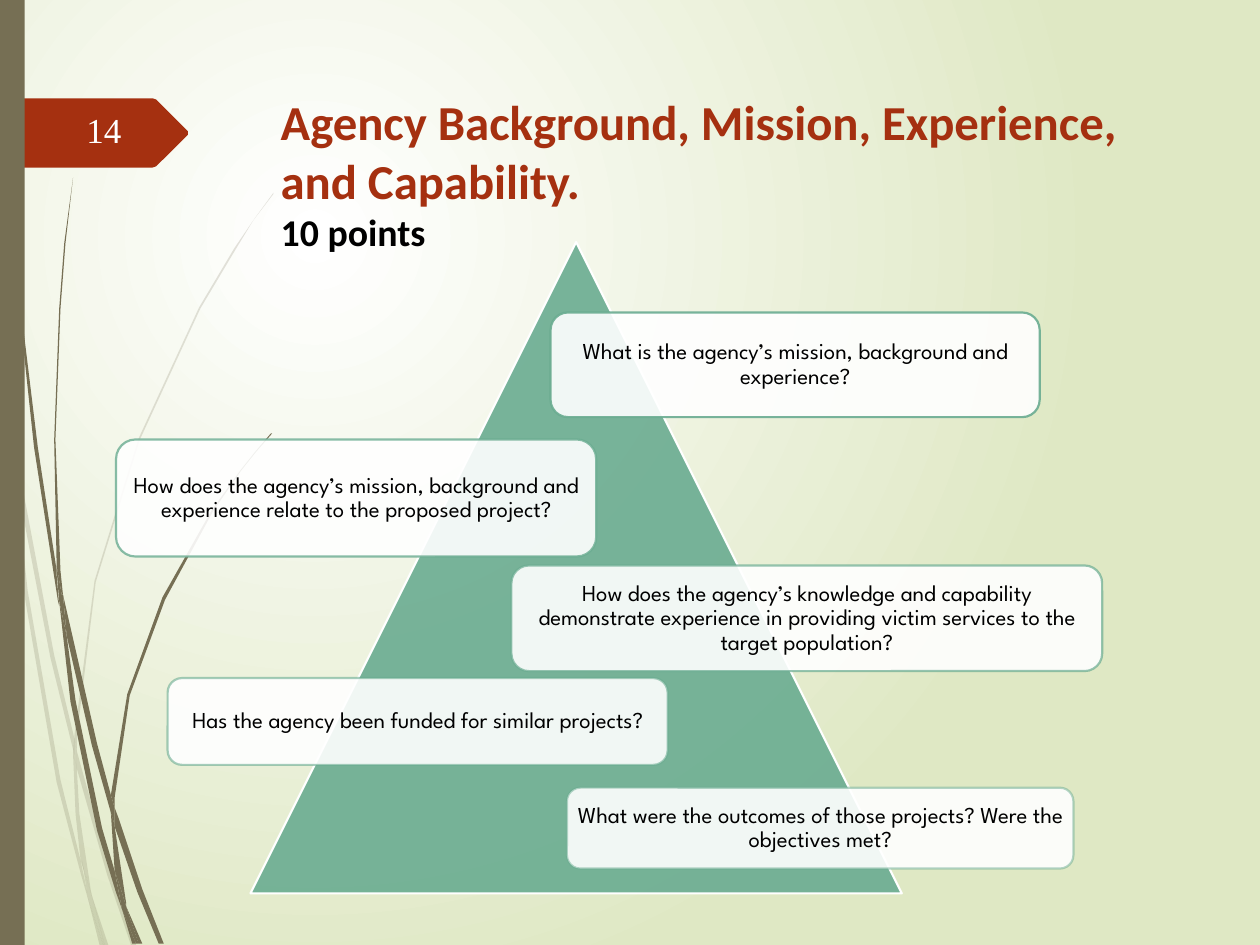
from lxml.etree import SubElement
from pptx import Presentation
from pptx.dml.color import RGBColor
from pptx.enum.shapes import MSO_SHAPE as Shape
from pptx.enum.text import MSO_ANCHOR as Anchor, PP_ALIGN as Align
from pptx.oxml.ns import qn
from pptx.util import Cm, Pt

COLORS = {"white": "FFFFFF", "black": "000000", "sage": "DFE8C4",
          "olive": "766F54", "rust": "A53010", "green": "6AAC91"}
RGB = {name: RGBColor.from_string(value) for name, value in COLORS.items()}
UNIT = Cm(2.54) / 100  # outlines are drawn in hundredths of an inch

# Outline points of each piece of the wisps
PALE_WISPS = [
    [(8, 350), (6, 322), (0, 282), (0, 299), (7, 344)],
    [(40, 522), (59, 599), (59, 586), (43, 520), (10, 345), (12, 376)],
    [(64, 607), (61, 596), (61, 610), (85, 694), (104, 750), (108, 750),
     (88, 692)],
    [(83, 750), (86, 750), (73, 711)],
    [(64, 683), (48, 619), (22, 469), (12, 376), (8, 350), (19, 470),
     (45, 621), (64, 693), (70, 714), (69, 707)],
    [(58, 599), (60, 646), (64, 683), (67, 692), (73, 711), (72, 706),
     (63, 646), (61, 610), (61, 608)],
    [(61, 584), (76, 462), (111, 349), (159, 245), (187, 198), (201, 175),
     (217, 154), (217, 153), (201, 175), (186, 197), (158, 244), (110, 348),
     (75, 461), (59, 584), (59, 586), (61, 596)],
    [(70, 714), (79, 750), (82, 750)],
    [(61, 608), (61, 610), (61, 596), (59, 586), (58, 599)],
    [(67, 692), (65, 683), (69, 707), (70, 714), (82, 750), (83, 750),
     (73, 711)],
]
DARK_WISPS = [
    [(5, 110), (14, 233), (27, 355), (46, 477), (47, 481), (45, 457),
     (45, 453), (30, 355), (15, 232), (6, 109), (4, 48), (3, 0), (2, 0),
     (3, 48)],
    [(73, 592), (88, 645), (88, 633), (88, 631), (77, 590), (50, 472),
     (53, 505)],
    [(94, 649), (91, 641), (91, 656), (109, 708), (126, 749), (130, 749),
     (113, 706)],
    [(91, 691), (81, 657), (60, 556), (53, 505), (47, 477), (56, 557),
     (77, 659), (92, 708), (97, 722), (96, 717)],
    [(50, 472), (48, 453), (44, 349), (48, 245), (52, 193), (58, 141),
     (58, 141), (51, 193), (47, 245), (43, 349), (45, 449), (49, 472)],
    [(110, 749), (113, 749), (100, 719)],
    [(47, 477), (53, 505), (50, 472), (49, 472), (45, 449), (45, 453)],
    [(91, 633), (103, 552), (131, 476), (169, 406), (191, 374), (203, 359),
     (216, 344), (215, 344), (203, 358), (191, 373), (168, 405), (129, 474),
     (101, 551), (88, 631), (91, 641)],
    [(97, 722), (105, 749), (108, 749)],
    [(88, 645), (91, 691), (96, 706), (100, 719), (100, 716), (91, 656),
     (90, 651)],
    [(88, 645), (90, 651), (91, 656), (91, 641), (88, 631), (88, 633)],
    [(96, 706), (91, 691), (96, 717), (97, 722), (108, 749), (110, 749),
     (100, 719)],
]
NUMBER_TAG = [(149, 107), (124, 132), (121, 133), (0, 133), (0, 78),
              (121, 78), (124, 79), (149, 104)]

QUESTIONS = [  # text, left, top, width, height, outline opacity
    ("What is the agency’s mission, background and experience?",
     11.1, 6.3, 9.86, 2.11, 90),
    ("How does the agency’s mission, background and experience relate "
     "to the proposed project?", 2.34, 8.86, 9.68, 2.36, 80),
    ("How does the agency’s knowledge and capability demonstrate experience "
     "in providing victim services to the target population?",
     10.31, 11.4, 11.91, 2.13, 70),
    ("Has the agency been funded for similar projects?",
     3.38, 13.67, 10.08, 1.75, 60),
    ("What were the outcomes of those projects? Were the objectives met?",
     11.43, 15.88, 10.21, 1.63, 50),
]
QUESTION_FRAME = {"word_wrap": True, "vertical_anchor": Anchor.MIDDLE,
                  "margin_left": Cm(0.12), "margin_right": Cm(0.12),
                  "margin_top": Cm(0.12), "margin_bottom": Cm(0.12)}


def paint(shape, fill, opacity=100, line=None, line_opacity=100):
    """Fill and outline a shape, with opacities in percent."""
    shape.shadow.inherit = False
    shape.fill.solid()
    shape.fill.fore_color.rgb = RGB[fill]
    if line:
        shape.line.color.rgb = RGB[line]
        shape.line.width = Pt(1.25)
    else:
        shape.line.fill.background()
    for path, percent in (("a:solidFill", opacity), ("a:ln", line_opacity)):
        if percent < 100:
            part = shape.element.spPr.find(qn(path))
            color = next(part.iter(qn("a:srgbClr")))
            SubElement(color, qn("a:alpha"), val=str(percent * 1000))


def write(paragraph, text, color, **font):
    run = paragraph.add_run()
    run.text = text
    run.font.color.rgb = RGB[color]
    for name, value in font.items():
        setattr(run.font, name, value)


deck = Presentation()
deck.slide_width, deck.slide_height = Cm(25.4), Cm(19.05)
slide = deck.slides.add_slide(deck.slide_layouts[6])
shapes = slide.shapes

# Radial background
backdrop = slide.background.fill
backdrop.gradient()
for stop, color in zip(backdrop.gradient_stops, ("white", "sage")):
    stop.color.rgb = RGB[color]
gradient = next(slide.element.iter(qn("a:gradFill")))
gradient.remove(gradient.find(qn("a:lin")))
circle = SubElement(gradient, qn("a:path"), path="circle")
SubElement(circle, qn("a:fillToRect"), l="50000", t="50000",
           r="100000", b="100000")

# Wisps, side bar and number tag
for outlines, color, opacity in ((PALE_WISPS, "olive", 20),
                                 (DARK_WISPS, "olive", 100),
                                 ([NUMBER_TAG], "rust", 100)):
    for start, *rest in outlines:
        builder = shapes.build_freeform(*start, scale=UNIT)
        builder.add_line_segments(rest, close=True)
        paint(builder.convert_to_shape(), color, opacity)
side_bar = shapes.add_shape(Shape.RECTANGLE, 0, 0, Cm(0.5), Cm(19.05))
paint(side_bar, "olive")

# Title and slide number
title = shapes.add_textbox(Cm(5.41), Cm(1.73), Cm(18.31), Cm(3.56)).text_frame
title.word_wrap = True
heading = title.paragraphs[0]
write(heading, "Agency Background, Mission, Experience, and Capability.",
      "rust", name="Calibri", size=Pt(27.9), bold=True)
heading.add_line_break()
write(heading, "10 points", "black", name="Calibri", size=Pt(21.6), bold=True)

number = shapes.add_textbox(Cm(1.07), Cm(2.11), Cm(1.63), Cm(1.02)).text_frame
number.word_wrap = True
number.vertical_anchor = Anchor.MIDDLE
number.paragraphs[0].alignment = Align.RIGHT
write(number.paragraphs[0], "14", "white", name="Times New Roman", size=Pt(20))

# Pyramid with its questions
pyramid = shapes.add_shape(Shape.ISOSCELES_TRIANGLE, Cm(5.05), Cm(4.88),
                           Cm(13.13), Cm(13.13))
paint(pyramid, "green", 90, "white")
for text, *box, line_opacity in QUESTIONS:
    question = shapes.add_shape(Shape.ROUNDED_RECTANGLE, *map(Cm, box))
    paint(question, "white", 90, "green", line_opacity)
    for name, value in QUESTION_FRAME.items():
        setattr(question.text_frame, name, value)
    paragraph = question.text_frame.paragraphs[0]
    paragraph.alignment = Align.CENTER
    paragraph.line_spacing = 0.9
    write(paragraph, text, "black", name="League Spartan", size=Pt(13))

deck.save("out.pptx")
